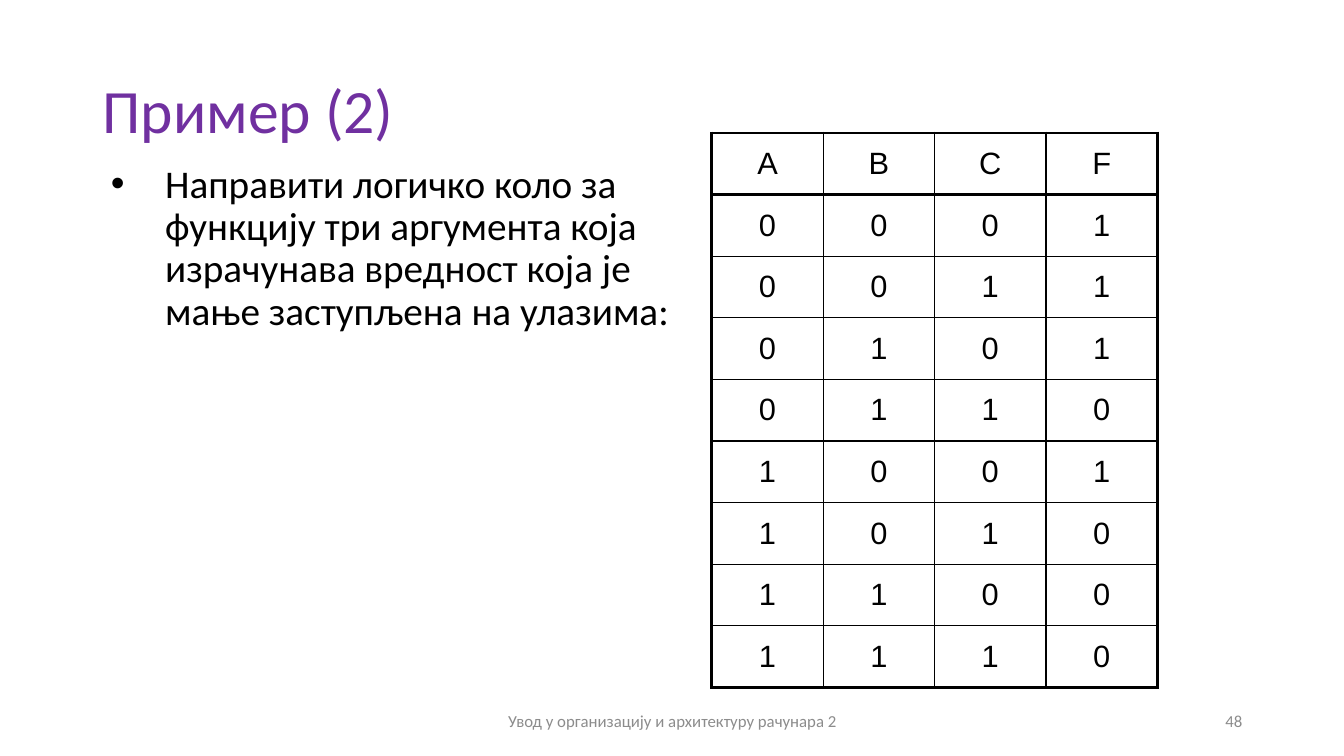
from dataclasses import dataclass, field
from itertools import product

from lxml.etree import SubElement
from pptx import Presentation
from pptx.dml.color import RGBColor
from pptx.enum.text import MSO_ANCHOR as Anchor, PP_ALIGN as Align
from pptx.oxml import parse_xml
from pptx.oxml.ns import nsdecls, qn
from pptx.slide import Slide
from pptx.table import _Cell as Cell
from pptx.text.text import _Paragraph as Paragraph, _Run as Run
from pptx.util import Inches, Pt

BLACK = RGBColor(0x00, 0x00, 0x00)
WHITE = RGBColor(0xFF, 0xFF, 0xFF)
GRAY = RGBColor(0x8C, 0x8C, 0x8C)
PURPLE = RGBColor(0x70, 0x30, 0xA0)

THICK, THIN = 2.25, 1
TABLE_BOX = (7.06, 1.32, 4.42, 5.5)
ARGUMENTS = ("A", "B", "C")


@dataclass
class TextBlock:
    text: str
    box: tuple[float, float, float, float]
    size: int
    color: RGBColor
    anchor: Anchor = Anchor.MIDDLE
    layout: dict = field(default_factory=dict)
    bullet: bool = False
    shadow: bool = False


BLOCKS = [
    TextBlock("Пример (2)", (0.92, 0.4, 11.5, 1.45), 44, PURPLE,
              layout={"line_spacing": 0.9}, shadow=True),
    TextBlock("Направити логичко коло за функцију три аргумента која "
              "израчунава вредност која је мање заступљена на улазима:",
              (1, 1.58, 5.89, 5.5), 28, BLACK, Anchor.TOP,
              {"line_spacing": 0.9, "space_before": Pt(10)}, bullet=True),
    TextBlock("Увод у организацију и архитектуру рачунара 2",
              (4.42, 6.95, 4.5, 0.4), 12, GRAY, layout={"alignment": Align.CENTER}),
    TextBlock("48", (9.42, 6.95, 3, 0.4), 12, GRAY, layout={"alignment": Align.RIGHT}),
]


def write(paragraph: Paragraph, text: str, layout: dict, font_name: str,
          size: int, color: RGBColor) -> Run:
    """Add one formatted run to the paragraph and return it."""
    for name, value in layout.items():
        setattr(paragraph, name, value)
    run = paragraph.add_run()
    run.text = text
    for name, value in {"name": font_name, "size": Pt(size)}.items():
        setattr(run.font, name, value)
    run.font.color.rgb = color
    return run


def add_bullet(paragraph: Paragraph) -> None:
    properties = paragraph._p.get_or_add_pPr()
    indent = Inches(0.54)
    properties.set("marL", str(indent))
    properties.set("indent", str(-indent))
    SubElement(properties, qn("a:buFont"), typeface="Arial")
    SubElement(properties, qn("a:buChar"), char="•")


def add_text_shadow(run: Run) -> None:
    """Cast a soft shadow down and to the left of the letters."""
    fill = run.font._element.find(qn("a:solidFill"))
    fill.addnext(parse_xml(
        f'<a:effectLst {nsdecls("a")}>'
        '<a:outerShdw blurRad="50800" dist="38100" dir="8100000" algn="tr" rotWithShape="0">'
        '<a:srgbClr val="000000"><a:alpha val="40000"/></a:srgbClr>'
        '</a:outerShdw></a:effectLst>'))


def add_text(slide: Slide, block: TextBlock) -> None:
    frame = slide.shapes.add_textbox(*map(Inches, block.box)).text_frame
    frame.word_wrap = True
    frame.vertical_anchor = block.anchor
    paragraph = frame.paragraphs[0]
    run = write(paragraph, block.text, block.layout, "Calibri", block.size, block.color)
    if block.bullet:
        add_bullet(paragraph)
    if block.shadow:
        add_text_shadow(run)


def set_borders(cell: Cell, widths: dict[str, float]) -> None:
    properties = cell._tc.get_or_add_tcPr()
    for position, (side, width) in enumerate(widths.items()):
        properties.insert(position, parse_xml(
            f'<a:ln{side} {nsdecls("a")} w="{Pt(width)}"><a:solidFill>'
            f'<a:srgbClr val="{BLACK}"/></a:solidFill></a:ln{side}>'))


def truth_rows() -> list[tuple]:
    """Header and all inputs, with F as the value less frequent among them."""
    inputs = product((0, 1), repeat=len(ARGUMENTS))
    return [(*ARGUMENTS, "F")] + [(*bits, int(sum(bits) < 2)) for bits in inputs]


def add_truth_table(slide: Slide) -> None:
    rows = truth_rows()
    last_row, last_column = len(rows) - 1, len(ARGUMENTS)
    table = slide.shapes.add_table(
        len(rows), last_column + 1, *map(Inches, TABLE_BOX)).table
    table.first_row = table.horz_banding = False
    for r, values in enumerate(rows):
        for c, value in enumerate(values):
            cell = table.cell(r, c)
            cell.vertical_anchor = Anchor.MIDDLE
            cell.fill.solid()
            cell.fill.fore_color.rgb = WHITE
            write(cell.text_frame.paragraphs[0], str(value),
                  {"alignment": Align.CENTER, "space_before": Pt(4.4)},
                  "Arial", 22, BLACK)
            set_borders(cell, {
                "L": THICK if c == 0 else THIN,
                "R": THICK if c == last_column else THIN,
                "T": THICK if r <= 1 else THIN,
                "B": THICK if r in (0, last_row) else THIN,
            })


def main() -> None:
    deck = Presentation()
    deck.slide_width, deck.slide_height = Inches(13.33), Inches(7.5)
    slide = deck.slides.add_slide(deck.slide_layouts[6])
    for block in BLOCKS:
        add_text(slide, block)
    add_truth_table(slide)
    deck.save("out.pptx")


if __name__ == "__main__":
    main()
